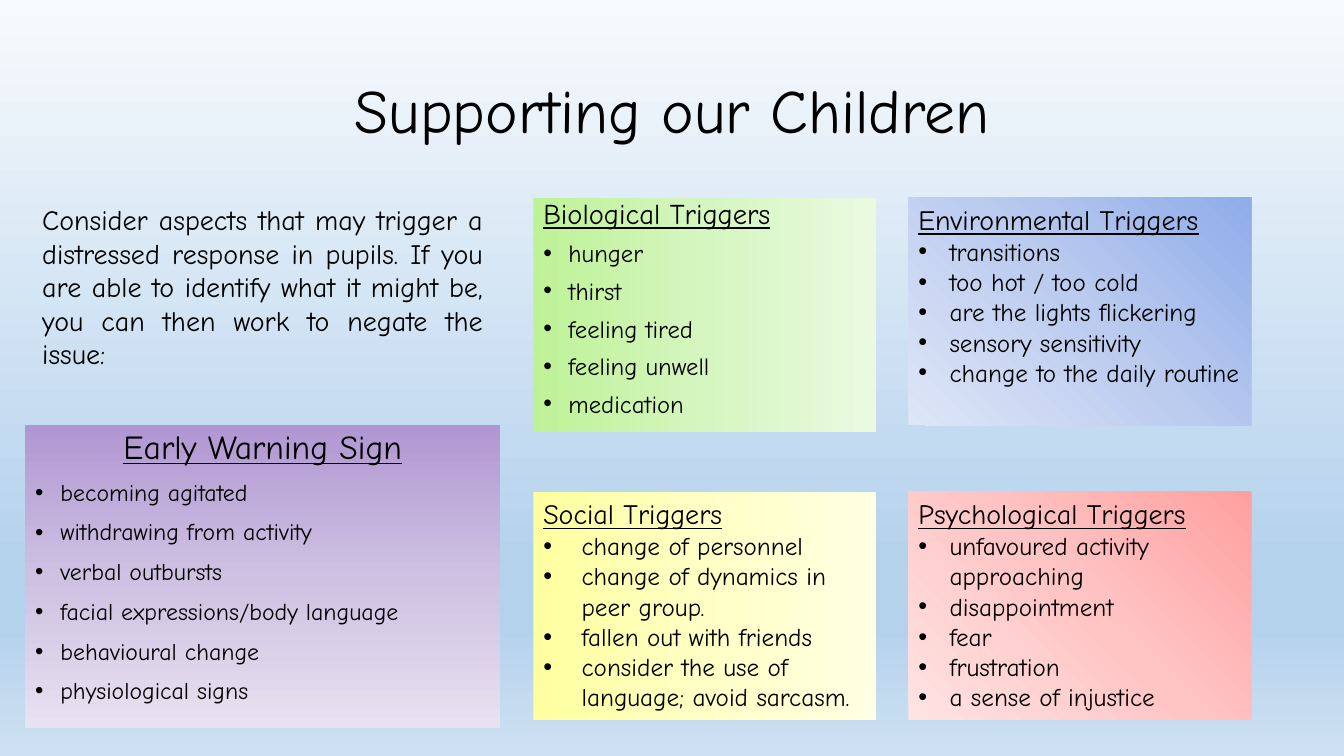
from dataclasses import dataclass
from typing import Optional

from lxml import etree
from pptx import Presentation
from pptx.dml.color import RGBColor
from pptx.enum import shapes, text
from pptx.oxml import parse_xml
from pptx.oxml.ns import nsdecls, qn
from pptx.util import Inches, Pt

FONT = "Comic Neue"
COLOURS = {
    "ink": "000000",
    "sky_top": "F7FAFD", "sky_deep": "B5D2EC", "sky_base": "CEE1F2",
    "purple": "B197D2", "purple_mid": "CEC1E2", "purple_pale": "E7E1F0",
    "green": "BEF297", "green_mid": "D5F6C0", "green_pale": "EAFAE0",
    "red": "FFA0A0", "red_mid": "FFC5C5", "red_pale": "FFE3E3",
    "yellow": "FFFFA0", "yellow_mid": "FFFFC5", "yellow_pale": "FFFFE3",
    "blue": "8FADE9", "blue_mid": "BCCCEF", "blue_pale": "DEE6F7",
}
# Shared edges of the four trigger cards
LEFT_COLUMN, RIGHT_COLUMN = 5.29, 9.01
UPPER_ROW, LOWER_ROW = 1.96, 4.88
CARD_WIDTH, CARD_HEIGHT = 3.4, 2.26


@dataclass(frozen=True)
class Card:
    heading: str
    signs: tuple[str, ...]
    hue: str
    left: float
    top: float
    width: float = CARD_WIDTH
    height: float = CARD_HEIGHT
    angle: Optional[int] = 0  # None: spreads from the top right corner
    heading_size: float = 20
    sign_size: float = 18
    indent: float = 0.31
    line_spacing: float = 1.0
    space_before: float = 0
    heading_align: text.PP_ALIGN = text.PP_ALIGN.LEFT


CARDS = (
    Card("Early Warning Sign",
         ("becoming agitated", "withdrawing from activity", "verbal outbursts",
          "facial expressions/body language", "behavioural change", "physiological signs"),
         "purple", 0.25, 4.22, 4.71, 3, angle=90, heading_size=24, sign_size=17,
         indent=0.25, line_spacing=0.9, space_before=10,
         heading_align=text.PP_ALIGN.CENTER),
    Card("Biological Triggers",
         ("hunger", "thirst", "feeling tired", "feeling unwell", "medication"),
         "green", LEFT_COLUMN, UPPER_ROW, height=2.33, heading_size=20.4, sign_size=17.6,
         indent=0.25, line_spacing=0.8, space_before=10),
    Card("Psychological Triggers",
         ("unfavoured activity approaching", "disappointment", "fear", "frustration",
          "a sense of injustice"),
         "red", RIGHT_COLUMN, LOWER_ROW, angle=None),
    Card("Social Triggers",
         ("change of personnel", "change of dynamics in peer group.",
          "fallen out with friends", "consider the use of language; avoid sarcasm."),
         "yellow", LEFT_COLUMN, LOWER_ROW, indent=0.38),
    Card("Environmental Triggers",
         ("transitions", "too hot / too cold", "are the lights flickering",
          "sensory sensitivity", "change to the daily routine"),
         "blue", RIGHT_COLUMN, UPPER_ROW, angle=None),
)


def paint_gradient(holder, stops: list[tuple[int, str]], angle: Optional[int]) -> None:
    """Swap the solid fill inside holder for a gradient."""
    stop_xml = "".join(
        f'<a:gs pos="{position * 1000}"><a:srgbClr val="{COLOURS[colour]}"/></a:gs>'
        for position, colour in stops)
    if angle is None:
        direction = ('<a:path path="circle"><a:fillToRect l="100000" b="100000"/></a:path>'
                     '<a:tileRect t="-100000" r="-100000"/>')
    else:
        direction = f'<a:lin ang="{angle * 60000}" scaled="0"/>'
    gradient = parse_xml(f'<a:gradFill {nsdecls("a")} rotWithShape="1">'
                         f'<a:gsLst>{stop_xml}</a:gsLst>{direction}</a:gradFill>')
    holder.replace(holder.find(qn("a:solidFill")), gradient)


def style_line(paragraph, size: float, underline: bool = False) -> None:
    for run in paragraph.runs:
        run.font.name = FONT
        run.font.size = Pt(size)
        run.font.underline = underline
        run.font.color.rgb = RGBColor.from_string(COLOURS["ink"])


def add_bullet(paragraph, indent: float) -> None:
    properties = paragraph._p.get_or_add_pPr()
    properties.set("marL", str(Inches(indent)))
    properties.set("indent", str(-Inches(indent)))
    etree.SubElement(properties, qn("a:buFont")).set("typeface", "Arial")
    etree.SubElement(properties, qn("a:buChar")).set("char", "•")


def add_card(slide, card: Card) -> None:
    panel = slide.shapes.add_shape(
        shapes.MSO_SHAPE.RECTANGLE, Inches(card.left), Inches(card.top),
        Inches(card.width), Inches(card.height))
    panel.shadow.inherit = False
    panel.line.fill.background()
    panel.fill.solid()
    stops = [(0, card.hue), (50, f"{card.hue}_mid"), (100, f"{card.hue}_pale")]
    paint_gradient(panel._element.spPr, stops, card.angle)

    frame = panel.text_frame
    frame.word_wrap = True
    frame.vertical_anchor = text.MSO_ANCHOR.TOP
    frame.text = "\n".join((card.heading, *card.signs))
    for index, paragraph in enumerate(frame.paragraphs):
        is_heading = index == 0
        paragraph.alignment = card.heading_align if is_heading else text.PP_ALIGN.LEFT
        paragraph.line_spacing = card.line_spacing
        paragraph.space_before = Pt(card.space_before)
        style_line(paragraph, card.heading_size if is_heading else card.sign_size, is_heading)
        if not is_heading:
            add_bullet(paragraph, card.indent)


def add_statement(slide, wording: str, box: tuple[float, float, float, float], size: float,
                  align: text.PP_ALIGN, anchor: text.MSO_ANCHOR,
                  line_spacing: float = 1.0) -> None:
    frame = slide.shapes.add_textbox(*map(Inches, box)).text_frame
    frame.word_wrap = True
    frame.vertical_anchor = anchor
    frame.text = wording
    statement = frame.paragraphs[0]
    statement.alignment = align
    statement.line_spacing = line_spacing
    style_line(statement, size)


def main() -> None:
    deck = Presentation()
    deck.slide_width, deck.slide_height = Inches(13.33), Inches(7.5)
    slide = deck.slides.add_slide(deck.slide_layouts[6])

    # Sky background
    slide.background.fill.solid()
    sky = slide._element.find(f".//{qn('p:bgPr')}")
    paint_gradient(sky, [(0, "sky_top"), (74, "sky_deep"), (83, "sky_deep"),
                         (100, "sky_base")], 90)

    # Title
    add_statement(slide, "Supporting our Children", (0.92, 0.4, 11.5, 1.45), 44,
                  text.PP_ALIGN.CENTER, text.MSO_ANCHOR.MIDDLE, 0.9)

    # Warning signs and triggers
    for card in CARDS:
        add_card(slide, card)

    # Introduction
    add_statement(slide, "Consider aspects that may trigger a distressed response in pupils. "
                  "If you are able to identify what it might be, you can then work to negate "
                  "the issue:", (0.32, 1.96, 4.57, 1.78), 20,
                  text.PP_ALIGN.JUSTIFY, text.MSO_ANCHOR.TOP)

    deck.save("out.pptx")


if __name__ == "__main__":
    main()
